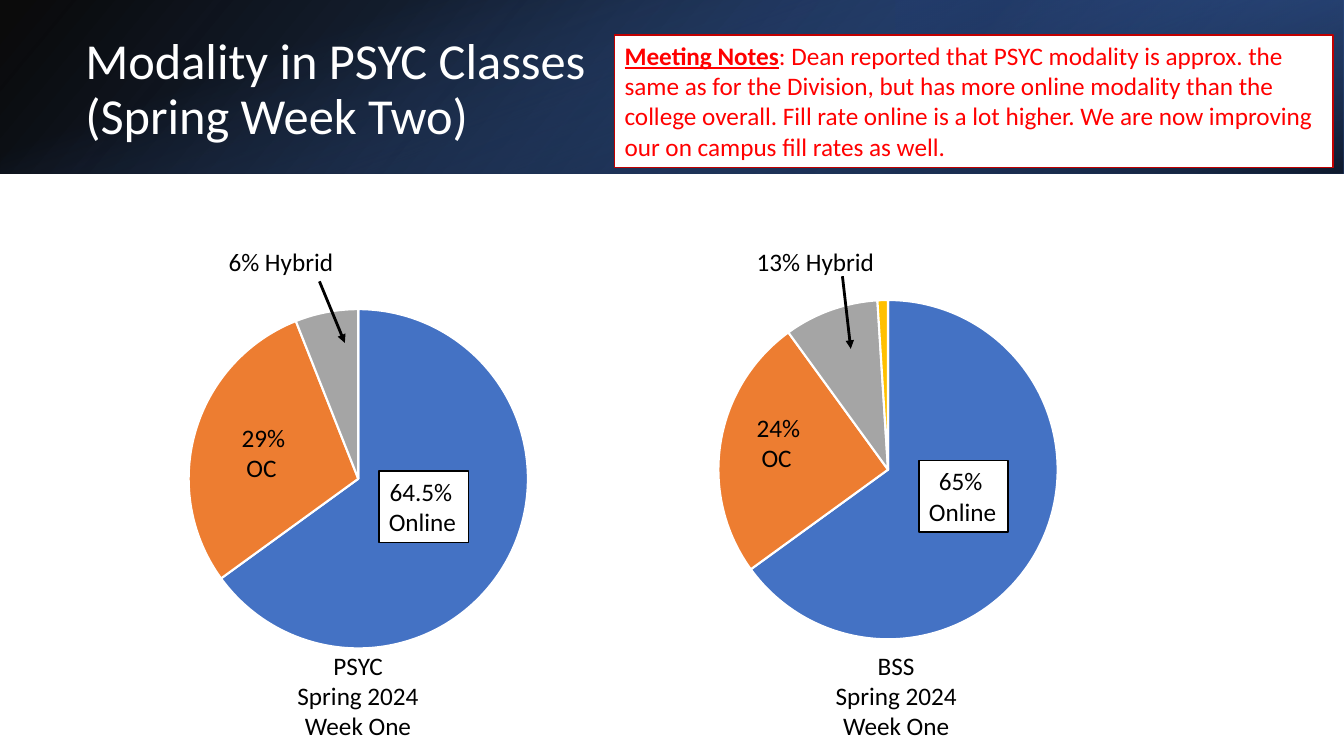
from lxml import etree
from pptx import Presentation
from pptx.chart.data import CategoryChartData
from pptx.dml.color import RGBColor
from pptx.enum.chart import XL_CHART_TYPE
from pptx.enum.shapes import MSO_CONNECTOR, MSO_SHAPE
from pptx.enum.text import MSO_ANCHOR, MSO_AUTO_SIZE, PP_ALIGN
from pptx.oxml import parse_xml
from pptx.oxml.ns import nsdecls, qn
from pptx.util import Cm, Pt

PIE = XL_CHART_TYPE.PIE
STRAIGHT = MSO_CONNECTOR.STRAIGHT
RECTANGLE = MSO_SHAPE.RECTANGLE
MIDDLE = MSO_ANCHOR.MIDDLE
FIT_SHAPE, NO_FIT = MSO_AUTO_SIZE.SHAPE_TO_FIT_TEXT, MSO_AUTO_SIZE.NONE
LEFT, CENTER = PP_ALIGN.LEFT, PP_ALIGN.CENTER

FONT = "Calibri"
BLACK = RGBColor(0x00, 0x00, 0x00)
WHITE = RGBColor(0xFF, 0xFF, 0xFF)
RED = RGBColor(0xFF, 0x00, 0x00)
DARK_RED = RGBColor(0xC0, 0x00, 0x00)
BLUE = RGBColor(0x44, 0x72, 0xC4)
MID_BLUE = RGBColor(0x2F, 0x55, 0x97)
NAVY = RGBColor(0x20, 0x38, 0x64)
ORANGE = RGBColor(0xED, 0x7D, 0x31)
GREY = RGBColor(0xA5, 0xA5, 0xA5)
YELLOW = RGBColor(0xFF, 0xC0, 0x00)
SLICE_COLORS = [BLUE, ORANGE, GREY, YELLOW]

SLIDE_WIDTH, BANNER_HEIGHT = 33.87, 4.37

prs = Presentation()
prs.slide_width, prs.slide_height = Cm(SLIDE_WIDTH), Cm(19.05)
slide = prs.slides.add_slide(prs.slide_layouts[6])


def add_text(box, text, size=18, color=BLACK, align=LEFT, wrap=False):
    """Add a text box at box (left, top, width, height in cm)."""
    label = slide.shapes.add_textbox(*[Cm(v) for v in box])
    frame = label.text_frame
    frame.text = text
    frame.word_wrap = wrap
    frame.auto_size = FIT_SHAPE
    for paragraph in frame.paragraphs:
        paragraph.alignment = align
        for run in paragraph.runs:
            run.font.name, run.font.size = FONT, Pt(size)
            run.font.color.rgb = color
    return label


def set_outline(label, color, width):
    """Give a label a white fill and a border of the given width in points."""
    label.fill.solid()
    label.fill.fore_color.rgb = WHITE
    label.line.color.rgb = color
    label.line.width = Pt(width)


# Banner: three overlaid gradients, each stop being (position, colour, opacity) in percent
banner_offset = (SLIDE_WIDTH - BANNER_HEIGHT) / 2
banner_layers = [
    ((0, 0, SLIDE_WIDTH, BANNER_HEIGHT), 0, True, 140,
     [(0, BLACK, 96), (100, MID_BLUE, 100)]),
    ((22.58, 0, 11.28, BANNER_HEIGHT), 180, True, 320,
     [(19, NAVY, 68), (100, BLUE, 79)]),
    ((banner_offset, -banner_offset, BANNER_HEIGHT, SLIDE_WIDTH), 90, False, 340,
     [(23, BLUE, 0), (99, BLACK, 74)]),
]
for box, rotation, flipped, angle, stops in banner_layers:
    layer = slide.shapes.add_shape(RECTANGLE, *[Cm(v) for v in box])
    layer.shadow.inherit = False
    layer.line.fill.background()
    layer.rotation = rotation
    properties = layer.element.spPr
    if flipped:
        properties.find(qn("a:xfrm")).set("flipH", "1")
    stop_xml = "".join(
        f'<a:gs pos="{position * 1000}"><a:srgbClr val="{color}">'
        f'<a:alpha val="{opacity * 1000}"/></a:srgbClr></a:gs>'
        for position, color, opacity in stops)
    properties.find(qn("a:prstGeom")).addnext(parse_xml(
        f'<a:gradFill {nsdecls("a")} rotWithShape="1"><a:gsLst>{stop_xml}</a:gsLst>'
        f'<a:lin ang="{angle * 60000}" scaled="0"/></a:gradFill>'))

title = add_text((1.9, 1.07, 18.77, 2.44), "Modality in PSYC Classes\v(Spring Week Two)",
                 size=36, color=WHITE, wrap=True)
title.text_frame.auto_size = NO_FIT
title.text_frame.vertical_anchor = MIDDLE
title.text_frame.paragraphs[0].line_spacing = 0.9

pies = [
    {"name": "BSS", "values": [65, 25, 9, 1], "chart": (17.45, 7.21, 9.86, 9.25),
     "online": ("65% ", (23.16, 11.61, 2.24, 1.8)),
     "campus": ("24% ", (18.8, 10.26, 1.78, 1.8)),
     "hybrid": ("13%", (18.82, 6.07, 3.51, 1.02)),
     "arrow": (21.23, 6.96, 21.44, 8.79), "caption_left": 20.78},
    {"name": "PSYC", "values": [65, 29, 6], "chart": (3.3, 7.44, 11.46, 9.25),
     "online": ("64.5% ", (9.55, 11.87, 2.26, 1.8)),
     "campus": ("29% ", (5.82, 10.52, 1.78, 1.8)),
     "hybrid": ("6%", (5.51, 6.07, 3.18, 1.02)),
     "arrow": (8.05, 7.09, 8.69, 8.64), "caption_left": 7.22},
]
for pie in pies:
    data = CategoryChartData()
    data.categories = [str(i + 1) for i in range(len(pie["values"]))]
    data.add_series("Series 1", pie["values"])
    chart = slide.shapes.add_chart(PIE, *[Cm(v) for v in pie["chart"]], data).chart
    chart.has_legend = chart.has_title = False
    chart.font.name, chart.font.size = FONT, Pt(10)
    chart.font.color.rgb = BLACK
    chart.plots[0].vary_by_categories = True
    for i, color in enumerate(SLICE_COLORS[:len(pie["values"])]):
        slice_format = chart.plots[0].series[0].points[i].format
        slice_format.fill.solid()
        slice_format.fill.fore_color.rgb = color
        slice_format.line.color.rgb = WHITE
        slice_format.line.width = Pt(1.5)

    percent, box = pie["online"]
    online = add_text(box, f"{percent}\nOnline")
    online.text_frame.paragraphs[0].alignment = CENTER
    set_outline(online, BLACK, 1)

    percent, box = pie["campus"]
    campus = add_text(box, f"{percent}\n OC")
    campus.text_frame.paragraphs[0].alignment = CENTER

    percent, box = pie["hybrid"]
    add_text(box, f"{percent} Hybrid")

    arrow = slide.shapes.add_connector(STRAIGHT, *[Cm(v) for v in pie["arrow"]])
    arrow.line.color.rgb = BLACK
    arrow.line.width = Pt(2)
    outline = arrow.element.spPr.find(qn("a:ln"))
    etree.SubElement(outline, qn("a:tailEnd"), type="triangle")
    etree.SubElement(arrow.element.spPr, qn("a:effectLst"))

    add_text((pie["caption_left"], 16.26, 3.61, 2.57),
             f"{pie['name']}\nSpring 2024\nWeek One", align=CENTER)

notes = add_text((15.49, 0.89, 18.11, 3.33), "Meeting Notes", color=RED, wrap=True)
set_outline(notes, DARK_RED, 1.25)
heading = notes.text_frame.paragraphs[0].runs[0]
heading.font.bold = heading.font.underline = True
report = notes.text_frame.paragraphs[0].add_run()
report.text = (": Dean reported that PSYC modality is approx. the same as for the Division, "
               "but has more online modality than the college overall. Fill rate online is "
               "a lot higher. We are now improving our on campus fill rates as well.")
report.font.name, report.font.size = FONT, Pt(18)
report.font.color.rgb = RED

prs.save("out.pptx")
